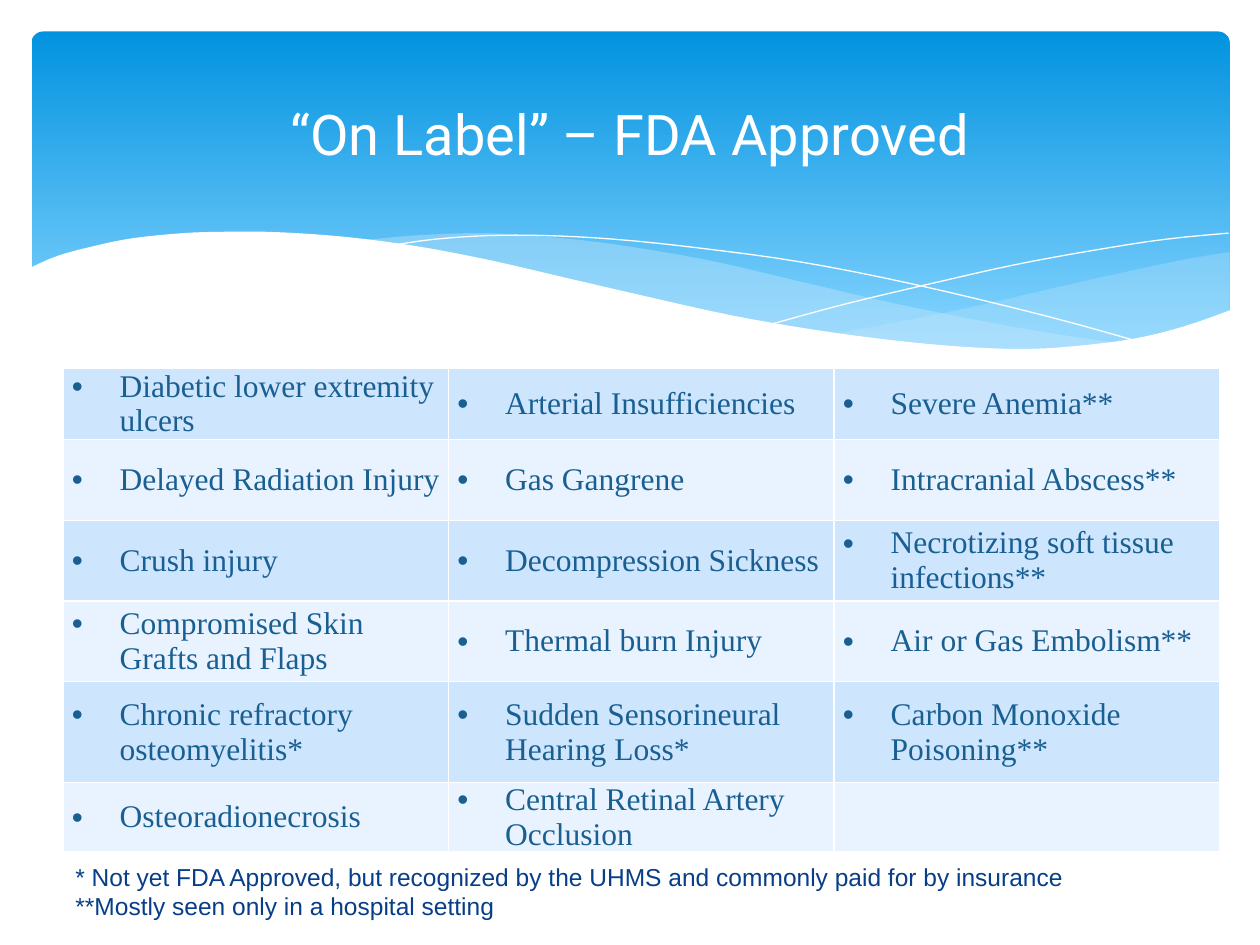
"""Build the slide of on-label, FDA approved indications under a wave banner."""
from dataclasses import dataclass

from lxml.etree import SubElement
from pptx import Presentation
from pptx.dml.color import RGBColor
from pptx.enum.shapes import MSO_SHAPE
from pptx.enum.text import MSO_ANCHOR, MSO_AUTO_SIZE, PP_ALIGN
from pptx.oxml import parse_xml
from pptx.oxml.ns import nsdecls, qn
from pptx.util import Inches, Pt


@dataclass(frozen=True)
class Theme:
    white: str = "FFFFFF"
    sky_top: str = "0293E0"
    sky_bottom: str = "83D3FE"
    mist: str = "C6E7FC"
    bands: tuple = ("CEE5FE", "E8F3FF")
    cell_ink: str = "195F92"
    note_ink: str = "073E87"
    title_font: str = "Roboto"
    cell_font: str = "Times New Roman"
    note_font: str = "Arial"
    title_size: int = 32
    cell_size: int = 18
    note_size: int = 14


THEME = Theme()
TITLE = "“On Label” – FDA Approved"
INDICATIONS = [
    ("Diabetic lower extremity ulcers", "Arterial Insufficiencies", "Severe Anemia**"),
    ("Delayed Radiation Injury", "Gas Gangrene", "Intracranial Abscess**"),
    ("Crush injury", "Decompression Sickness", "Necrotizing soft tissue infections**"),
    ("Compromised Skin Grafts and Flaps", "Thermal burn Injury", "Air or Gas Embolism**"),
    ("Chronic refractory osteomyelitis*", "Sudden Sensorineural Hearing Loss*",
     "Carbon Monoxide Poisoning**\u00a0"),
    ("Osteoradionecrosis", "Central Retinal Artery Occlusion", ""),
]
FOOTNOTES = [
    "* Not yet FDA Approved, but recognized by the UHMS and commonly paid for by insurance",
    "**Mostly seen only in a hospital setting",
]
ROW_HEIGHTS = [0.57, 0.64, 0.64, 0.64, 0.8, 0.55]
COLUMN_WIDTH = 3.06

RIGHT_MIST = [
    [(9.76, 2), (9.35, 2.07), (8.61, 2.23), (7.79, 2.42), (7.06, 2.57), (6.61, 2.65)],
    [(6.61, 2.65), (7.19, 2.72), (7.69, 2.77), (8.24, 2.77), (8.72, 2.74),
     (9.13, 2.67), (9.49, 2.57), (9.76, 2.47)],
]
MIDDLE_MIST = [
    [(8.93, 2.73), (8.37, 2.65), (7.75, 2.54), (7.06, 2.4), (6.29, 2.22), (5.69, 2.08),
     (5.14, 1.98), (4.65, 1.91), (4.2, 1.87), (3.8, 1.85), (3.28, 1.87), (2.86, 1.91)],
    [(2.86, 1.91), (3.42, 1.99), (4.04, 2.11), (4.49, 2.22), (5.3, 2.4), (6.01, 2.55),
     (6.65, 2.66), (7.22, 2.74), (7.73, 2.77), (8.18, 2.78), (8.57, 2.77), (8.93, 2.73)],
]
FALLING_LINE = [
    [(3.09, 1.95), (3.44, 1.9), (3.87, 1.87), (4.33, 1.87), (4.89, 1.9), (5.56, 1.97),
     (6.36, 2.08), (7.27, 2.26), (8.31, 2.51), (9.07, 2.72)],
]
RISING_LINE = [
    [(6.13, 2.57), (6.72, 2.41), (7.48, 2.23), (8.06, 2.1), (8.66, 1.99),
     (9.24, 1.9), (9.75, 1.85)],
]
WHITE_WAVE = [
    [(9.77, 2.46), (9.4, 2.59), (8.99, 2.69), (8.5, 2.75), (8.09, 2.77), (7.61, 2.75),
     (7.08, 2.7), (6.48, 2.62), (5.79, 2.5), (5.03, 2.33), (4.47, 2.2), (3.91, 2.07),
     (3.4, 1.97), (2.92, 1.9), (2.5, 1.86), (2.11, 1.84), (1.77, 1.84), (1.46, 1.85),
     (1.06, 1.89), (0.76, 1.95), (0.46, 2.03), (0.23, 2.13)],
    [(0.23, 3.29), (9.77, 3.29)],
]
FILLED_WAVES = [(RIGHT_MIST, THEME.mist, 29), (MIDDLE_MIST, THEME.mist, 40)]
WAVE_LINES = [FALLING_LINE, RISING_LINE]


def color(code):
    return RGBColor.from_string(code)


def smooth(knots, steps=4):
    """Return points on a Catmull-Rom curve through the knots."""
    if len(knots) < 3:
        return knots
    padded = [knots[0], *knots, knots[-1]]
    points = []
    for before, start, end, after in zip(padded, padded[1:], padded[2:], padded[3:]):
        for t in (step / steps for step in range(steps)):
            points.append(tuple(
                0.5 * (2 * b + (c - a) * t + (2 * a - 5 * b + 4 * c - d) * t ** 2
                       + (3 * b - a - 3 * c + d) * t ** 3)
                for a, b, c, d in zip(before, start, end, after)))
    return points + [knots[-1]]


def add_curve(slide, edges, closed):
    points = [(Inches(x), Inches(y)) for edge in edges for x, y in smooth(edge)]
    builder = slide.shapes.build_freeform(*points[0])
    builder.add_line_segments(points[1:], close=closed)
    curve = builder.convert_to_shape()
    curve.shadow.inherit = False
    return curve


def add_wave(slide, edges, fill, opacity=100):
    wave = add_curve(slide, edges, True)
    wave.line.fill.background()
    wave.fill.solid()
    wave.fill.fore_color.rgb = color(fill)
    if opacity < 100:
        tint = wave.fill._xPr.find(qn("a:solidFill"))[0]
        SubElement(tint, qn("a:alpha")).set("val", str(opacity * 1000))


def add_banner(slide):
    sky = slide.shapes.add_shape(MSO_SHAPE.ROUNDED_RECTANGLE, Inches(0.25), Inches(0.25),
                                 Inches(9.51), Inches(2.7))
    sky.adjustments[0] = 0.034
    sky.shadow.inherit = False
    sky.line.fill.background()
    sky.fill.gradient()
    sky.fill.gradient_angle = 270
    stops = [(0, THEME.sky_top), (0.9, THEME.sky_bottom)]
    for stop, (position, code) in zip(sky.fill.gradient_stops, stops):
        stop.position = position
        stop.color.rgb = color(code)
    for edges, fill, opacity in FILLED_WAVES:
        add_wave(slide, edges, fill, opacity)
    for edges in WAVE_LINES:
        streak = add_curve(slide, edges, False)
        streak.fill.background()
        streak.line.color.rgb = color(THEME.white)
        streak.line.width = Pt(0)
    add_wave(slide, WHITE_WAVE, THEME.white)


def add_run(paragraph, text, font, size, code):
    run = paragraph.add_run()
    run.text = text
    run.font.name, run.font.size = font, Pt(size)
    run.font.color.rgb = color(code)


def place_title(slide):
    title = slide.shapes.title
    title.left, title.top, title.width, title.height = map(Inches, (0.5, 0.37, 9, 1.37))
    slide.shapes._spTree.append(title._element)
    title.text_frame.vertical_anchor = MSO_ANCHOR.MIDDLE
    heading = title.text_frame.paragraphs[0]
    heading.alignment = PP_ALIGN.CENTER
    add_run(heading, TITLE, THEME.title_font, THEME.title_size, THEME.white)


def format_cell(cell, indication, fill):
    cell.vertical_anchor = MSO_ANCHOR.MIDDLE
    cell.margin_left = cell.margin_right = Inches(0.07)
    cell.margin_top = cell.margin_bottom = 0
    cell.fill.solid()
    cell.fill.fore_color.rgb = color(fill)
    for index, side in enumerate("LRTB"):
        cell._tc.tcPr.insert(index, parse_xml(
            f'<a:ln{side} {nsdecls("a")} w="{Pt(1)}"><a:solidFill>'
            f'<a:srgbClr val="{THEME.white}"/></a:solidFill></a:ln{side}>'))
    if indication:
        item = cell.text_frame.paragraphs[0]
        bullet = item._p.get_or_add_pPr()
        bullet.set("marL", str(Inches(0.38)))
        bullet.set("indent", str(-Inches(0.38)))
        SubElement(bullet, qn("a:buFont")).set("typeface", "Arial")
        SubElement(bullet, qn("a:buChar")).set("char", "•")
        add_run(item, indication, THEME.cell_font, THEME.cell_size, THEME.cell_ink)


def add_indications(slide):
    columns = len(INDICATIONS[0])
    table = slide.shapes.add_table(
        len(INDICATIONS), columns, Inches(0.5), Inches(2.92),
        Inches(COLUMN_WIDTH * columns), Inches(sum(ROW_HEIGHTS))).table
    table.first_row = table.horz_banding = False
    for r, (indications, height) in enumerate(zip(INDICATIONS, ROW_HEIGHTS)):
        table.rows[r].height = Inches(height)
        for c, indication in enumerate(indications):
            format_cell(table.cell(r, c), indication, THEME.bands[r % 2])


def add_footnotes(slide):
    notes = slide.shapes.add_textbox(*map(Inches, (0.5, 6.79, 9.17, 0.57))).text_frame
    notes.word_wrap = True
    notes.auto_size = MSO_AUTO_SIZE.SHAPE_TO_FIT_TEXT
    paragraph = notes.paragraphs[0]
    for index, note in enumerate(FOOTNOTES):
        if index:
            paragraph.add_line_break()
        add_run(paragraph, note, THEME.note_font, THEME.note_size, THEME.note_ink)


def main():
    deck = Presentation()
    deck.slide_width, deck.slide_height = Inches(10), Inches(7.5)
    slide = deck.slides.add_slide(deck.slide_layouts[5])
    add_banner(slide)
    place_title(slide)
    add_indications(slide)
    add_footnotes(slide)
    deck.save("out.pptx")


if __name__ == "__main__":
    main()
